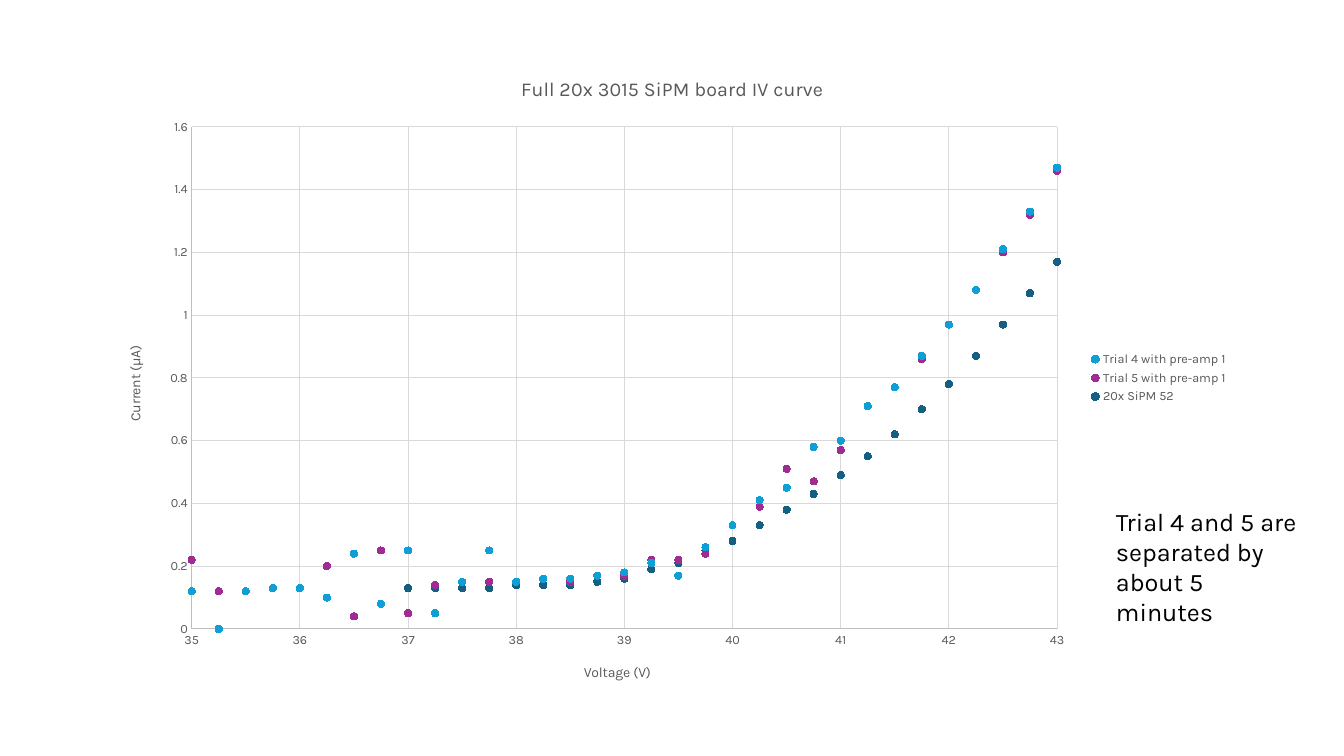
"""Build a slide with the IV curve scatter chart of a 20x SiPM board."""
from lxml.etree import SubElement
from pptx import Presentation
from pptx.chart.data import XyChartData
from pptx.dml.color import RGBColor
from pptx.enum.chart import XL_CHART_TYPE, XL_LEGEND_POSITION, XL_MARKER_STYLE, XL_TICK_MARK
from pptx.enum.text import MSO_AUTO_SIZE
from pptx.oxml.ns import qn
from pptx.util import Inches, Pt

BLUE = RGBColor(0x0F, 0x9E, 0xD5)
PURPLE = RGBColor(0xA0, 0x2B, 0x93)
NAVY = RGBColor(0x15, 0x60, 0x82)
GRAY = RGBColor(0x59, 0x59, 0x59)
AXIS_GRAY = RGBColor(0xBF, 0xBF, 0xBF)
GRID_GRAY = RGBColor(0xD9, 0xD9, 0xD9)
BLACK = RGBColor(0, 0, 0)
FONT = "Karla"

CHART_TITLE = "Full 20x 3015 SiPM board IV curve"
NOTE = "Trial 4 and 5 are separated by about 5 minutes"
VOLTAGE_STEP = 0.25
TRIALS = [
    ("Trial 4 with pre-amp 1", BLUE, 35,
     [0.12, 0, 0.12, 0.13, 0.13, 0.1, 0.24, 0.08, 0.25, 0.05, 0.15, 0.25, 0.15, 0.16, 0.16, 0.17, 0.18,
      0.21, 0.17, 0.26, 0.33, 0.41, 0.45, 0.58, 0.6, 0.71, 0.77, 0.87, 0.97, 1.08, 1.21, 1.33, 1.47]),
    ("Trial 5 with pre-amp 1", PURPLE, 35,
     [0.22, 0.12, 0.12, 0.13, 0.13, 0.2, 0.04, 0.25, 0.05, 0.14, 0.15, 0.15, 0.15, 0.16, 0.15, 0.17, 0.17,
      0.22, 0.22, 0.24, 0.33, 0.39, 0.51, 0.47, 0.57, 0.71, 0.77, 0.86, 0.97, 1.08, 1.2, 1.32, 1.46]),
    ("20x SiPM 52", NAVY, 37,
     [0.13, 0.13, 0.13, 0.13, 0.14, 0.14, 0.14, 0.15, 0.16, 0.19, 0.21, 0.25, 0.28,
      0.33, 0.38, 0.43, 0.49, 0.55, 0.62, 0.7, 0.78, 0.87, 0.97, 1.07, 1.17]),
]
AXES = {"category_axis": ("Voltage (V)", 35, 43, 1), "value_axis": ("Current (µA)", 0, 1.6, 0.2)}
CHART_BOX = (1.06, 0.54, 11.22, 6.42)
NOTE_BOX = (10.97, 4.97, 2.03, 1.01)
PLOT_SHARES = {"x": 0.075, "y": 0.112, "w": 0.765, "h": 0.776}


def format_font(font, size, color=GRAY):
    font.name, font.size, font.bold = FONT, Pt(size), False
    font.color.rgb = color


def write_text(frame, text, size, color=GRAY):
    frame.text = text
    format_font(frame.paragraphs[0].runs[0].font, size, color)


def format_axis(axis, title, minimum, maximum, unit):
    write_text(axis.axis_title.text_frame, title, 10)
    axis.minimum_scale, axis.maximum_scale, axis.major_unit = minimum, maximum, unit
    axis.major_tick_mark = axis.minor_tick_mark = XL_TICK_MARK.NONE
    axis.has_major_gridlines = True
    for line, color in ((axis.format.line, AXIS_GRAY), (axis.major_gridlines.format.line, GRID_GRAY)):
        line.color.rgb = color
        line.width = Pt(0.75)
    format_font(axis.tick_labels.font, 9)


def place_plot(chart):
    plot_area = chart._chartSpace.chart.plotArea
    for old_layout in plot_area.findall(qn("c:layout")):
        plot_area.remove(old_layout)
    layout = SubElement(plot_area, qn("c:layout"))
    plot_area.insert(0, layout)
    manual = SubElement(layout, qn("c:manualLayout"))
    settings = {"layoutTarget": "inner", "xMode": "edge", "yMode": "edge", **PLOT_SHARES}
    for name, value in settings.items():
        SubElement(manual, qn(f"c:{name}")).set("val", str(value))


def add_iv_chart(slide):
    data = XyChartData()
    for name, _, start, currents in TRIALS:
        series = data.add_series(name)
        for index, current in enumerate(currents):
            series.add_data_point(start + index * VOLTAGE_STEP, current)
    chart = slide.shapes.add_chart(XL_CHART_TYPE.XY_SCATTER, *map(Inches, CHART_BOX), data).chart
    format_font(chart.font, 10, BLACK)
    write_text(chart.chart_title.text_frame, CHART_TITLE, 14)
    chart.chart_title.include_in_layout = False
    for axis_name, settings in AXES.items():
        format_axis(getattr(chart, axis_name), *settings)
    chart.value_axis.axis_title.text_frame._txBody.bodyPr.set("rot", "-5400000")
    chart.has_legend = True
    chart.legend.position = XL_LEGEND_POSITION.RIGHT
    chart.legend.include_in_layout = False
    format_font(chart.legend.font, 9)
    chart.plots[0].vary_by_categories = False
    for series, (_, color, _, _) in zip(chart.plots[0].series, TRIALS):
        series.smooth = False
        series.format.line.fill.background()
        marker = series.marker
        marker.style, marker.size = XL_MARKER_STYLE.CIRCLE, 5
        marker.format.fill.solid()
        marker.format.fill.fore_color.rgb = color
        marker.format.line.color.rgb = color
    place_plot(chart)


def main():
    presentation = Presentation()
    presentation.slide_width, presentation.slide_height = Inches(13.33), Inches(7.5)
    slide = presentation.slides.add_slide(presentation.slide_layouts[6])
    add_iv_chart(slide)
    frame = slide.shapes.add_textbox(*map(Inches, NOTE_BOX)).text_frame
    frame.word_wrap = True
    frame.auto_size = MSO_AUTO_SIZE.SHAPE_TO_FIT_TEXT
    write_text(frame, NOTE, 18, BLACK)
    presentation.save("out.pptx")


if __name__ == "__main__":
    main()
